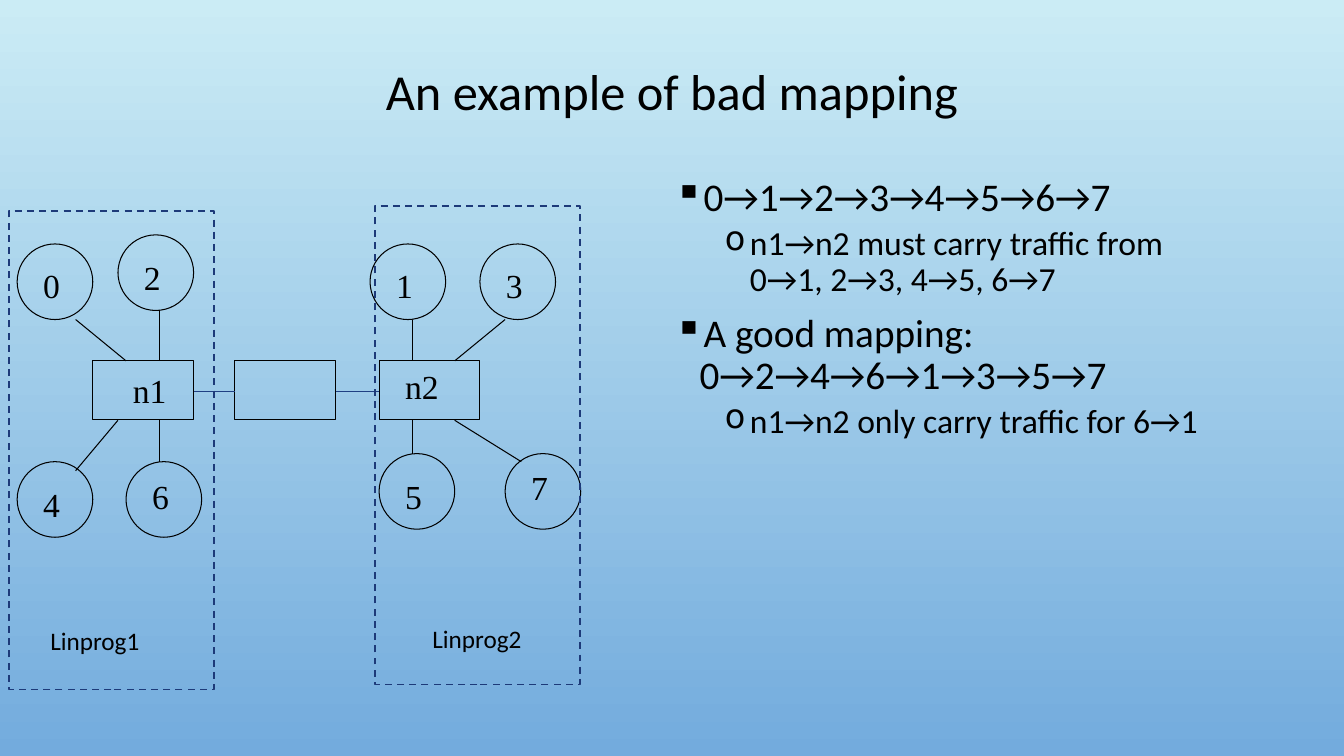
from lxml import etree
from pptx import Presentation
from pptx.dml.color import RGBColor
from pptx.enum.dml import MSO_LINE
from pptx.enum.shapes import MSO_CONNECTOR, MSO_SHAPE
from pptx.enum.text import MSO_ANCHOR, PP_ALIGN
from pptx.oxml.ns import qn
from pptx.util import Pt

PX = 9144
BLACK = RGBColor(0x00, 0x00, 0x00)
SKY = RGBColor(0xCB, 0xEC, 0xF5)
BLUE = RGBColor(0x73, 0xAB, 0xDD)
LINK = RGBColor(0x1F, 0x3F, 0x83)
FRAME = RGBColor(0x1D, 0x3A, 0x79)
RECT, OVAL = MSO_SHAPE.RECTANGLE, MSO_SHAPE.OVAL
STRAIGHT = MSO_CONNECTOR.STRAIGHT
DASH = MSO_LINE.DASH
MIDDLE, CENTER = MSO_ANCHOR.MIDDLE, PP_ALIGN.CENTER

prs = Presentation()
prs.slide_width, prs.slide_height = 1333 * PX, 750 * PX
s = prs.slides.add_slide(prs.slide_layouts[5])
fill = s.background.fill
fill.gradient()
fill.gradient_angle = 270
for stop, color, position in zip(fill.gradient_stops, (SKY, BLUE), (0, 1)):
    stop.color.rgb = color
    stop.position = position


def add_outline(kind, x, y, w, h, color=BLACK, width=0.75):
    sp = s.shapes.add_shape(kind, x * PX, y * PX, w * PX, h * PX)
    sp.shadow.inherit = False
    sp.fill.background()
    sp.line.color.rgb = color
    sp.line.width = Pt(width)
    return sp


def add_label(text, x, y, w, h, size, font):
    tf = s.shapes.add_textbox(x * PX, y * PX, w * PX, h * PX).text_frame
    tf.word_wrap = False
    tf.text = text
    f = tf.paragraphs[0].runs[0].font
    f.size, f.name, f.color.rgb = Pt(size), font, BLACK


title = s.shapes.title
title.left, title.top, title.width, title.height = 100 * PX, 32 * PX, 1133 * PX, 123 * PX
tf = title.text_frame
tf.text = "An example of bad mapping"
tf.vertical_anchor = MIDDLE
p = tf.paragraphs[0]
p.alignment, p.line_spacing = CENTER, 0.9
f = p.runs[0].font
f.size, f.name, f.color.rgb = Pt(36), "Calibri", BLACK

points = [
    (0, "0→1→2→3→4→5→6→7"),
    (1, "n1→n2 must carry traffic from 0→1, 2→3, 4→5, 6→7"),
    (0, "A good mapping: 0→2→4→6→1→3→5→7"),
    (1, "n1→n2 only carry traffic for 6→1"),
]
levels = [(25, "▪", 28, 10), (75, "o", 24, 5)]
tf = s.shapes.add_textbox(659 * PX, 171 * PX, 574 * PX, 462 * PX).text_frame
tf.word_wrap = True
for i, (level, text) in enumerate(points):
    margin, bullet, size, before = levels[level]
    p = tf.add_paragraph() if i else tf.paragraphs[0]
    p.text = text
    p.level, p.line_spacing = level, 0.9
    p.space_before = Pt(before if i else 0)
    pPr = p._p.get_or_add_pPr()
    pPr.set("marL", str(margin * PX))
    pPr.set("indent", str(-25 * PX))
    etree.SubElement(pPr, qn("a:buChar")).set("char", bullet)
    f = p.runs[0].font
    f.size, f.name, f.color.rgb = Pt(size), "Calibri", BLACK

for x in (92, 233, 376):
    add_outline(RECT, x, 358, 100, 58)

nodes = [
    ("0", 17, 242, 16), ("1", 367, 242, 16), ("2", 117, 233, 17), ("3", 476, 242, 16),
    ("4", 17, 458, 17), ("5", 376, 450, 17), ("6", 125, 458, 9), ("7", 501, 450, 8),
]
for name, x, y, drop in nodes:
    add_outline(OVAL, x, y, 75, 75)
    add_label(name, x + 16, y + drop, 37, 50, 24, "Times New Roman")
for name, x, y in (("n1", 122, 362), ("n2", 392, 358)):
    add_label(name, x, y, 54, 50, 24, "Times New Roman")

lines = [
    (75, 317, 125, 358, BLACK), (158, 308, 158, 358, BLACK),
    (117, 417, 75, 467, BLACK), (158, 417, 158, 458, BLACK),
    (409, 317, 409, 358, BLACK), (451, 358, 501, 317, BLACK),
    (409, 417, 409, 450, BLACK), (451, 417, 517, 458, BLACK),
    (192, 388, 233, 388, LINK), (333, 388, 376, 388, LINK),
]
for x1, y1, x2, y2, color in lines:
    c = s.shapes.add_connector(STRAIGHT, x1 * PX, y1 * PX, x2 * PX, y2 * PX)
    c.line.color.rgb = color
    c.line.width = Pt(0.75)
    etree.SubElement(c._element.spPr, qn("a:effectLst"))

machines = [("Linprog1", 9, 209, 40, 615), ("Linprog2", 372, 204, 419, 613)]
for name, x, y, label_x, label_y in machines:
    add_outline(RECT, x, y, 203, 475, FRAME, 1.25).line.dash_style = DASH
    add_label(name, label_x, label_y, 109, 40, 18, "Calibri")

prs.save("out.pptx")
